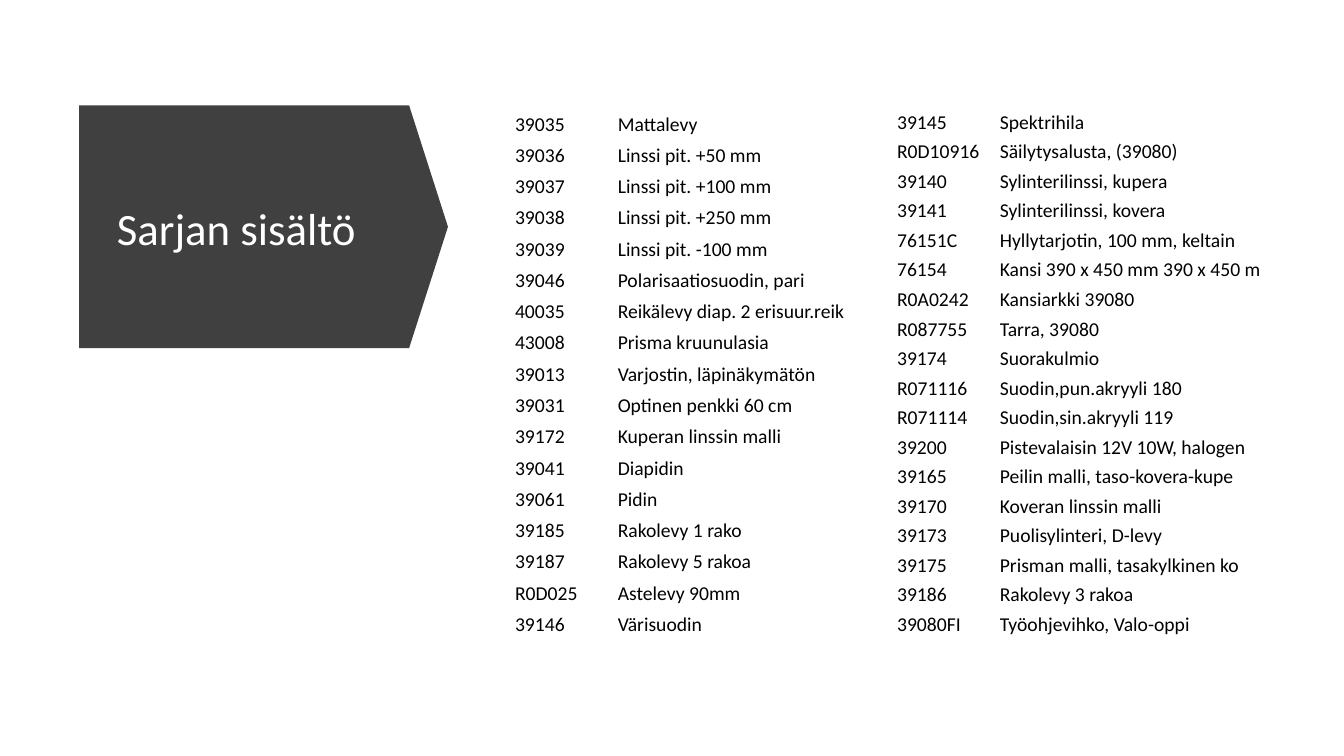
from pptx import Presentation
from pptx.dml.color import RGBColor
from pptx.enum import shapes, text
from pptx.util import Pt

FONT = "Calibri"
COLORS = {"arrow": "404040", "title": "FFFFFF", "text": "000000"}

LEFT = [
    ("39035", "Mattalevy"),
    ("39036", "Linssi pit. +50 mm"),
    ("39037", "Linssi pit. +100 mm"),
    ("39038", "Linssi pit. +250 mm"),
    ("39039", "Linssi pit. -100 mm"),
    ("39046", "Polarisaatiosuodin, pari"),
    ("40035", "Reikälevy diap. 2 erisuur.reik"),
    ("43008", "Prisma kruunulasia"),
    ("39013", "Varjostin, läpinäkymätön"),
    ("39031", "Optinen penkki 60 cm"),
    ("39172", "Kuperan linssin malli"),
    ("39041", "Diapidin"),
    ("39061", "Pidin"),
    ("39185", "Rakolevy 1 rako"),
    ("39187", "Rakolevy 5 rakoa"),
    ("R0D025", "Astelevy 90mm"),
    ("39146", "Värisuodin"),
]
RIGHT = [
    ("39145", "Spektrihila"),
    ("R0D10916", "Säilytysalusta, (39080)"),
    ("39140", "Sylinterilinssi, kupera"),
    ("39141", "Sylinterilinssi, kovera"),
    ("76151C", "Hyllytarjotin, 100 mm, keltain"),
    ("76154", "Kansi 390 x 450 mm 390 x 450 m"),
    ("R0A0242", "Kansiarkki 39080"),
    ("R087755", "Tarra, 39080"),
    ("39174", "Suorakulmio"),
    ("R071116", "Suodin,pun.akryyli 180"),
    ("R071114", "Suodin,sin.akryyli 119"),
    ("39200", "Pistevalaisin 12V 10W, halogen"),
    ("39165", "Peilin malli, taso-kovera-kupe"),
    ("39170", "Koveran linssin malli"),
    ("39173", "Puolisylinteri, D-levy"),
    ("39175", "Prisman malli, tasakylkinen ko"),
    ("39186", "Rakolevy 3 rakoa"),
    ("39080FI", "Työohjevihko, Valo-oppi"),
]


def style(par, size, color, align):
    par.alignment = align
    for run in par.runs:
        run.font.name = FONT
        run.font.size = Pt(size)
        run.font.color.rgb = RGBColor.from_string(COLORS[color])


def add_arrow(slide):
    # Turned a quarter, the block arrow points right
    arrow = slide.shapes.add_shape(
        shapes.MSO_SHAPE.DOWN_ARROW, Pt(101.5), Pt(30.2), Pt(173.5), Pt(263.5))
    arrow.rotation = 270
    arrow.adjustments[0] = 1
    arrow.adjustments[1] = 0.16
    arrow.shadow.inherit = False
    arrow.fill.solid()
    arrow.fill.fore_color.rgb = RGBColor.from_string(COLORS["arrow"])
    arrow.line.fill.background()
    return arrow


def set_title(slide, words):
    title = slide.shapes.title
    title.left, title.top = Pt(76.3), Pt(95)
    title.width, title.height = Pt(210), Pt(140.4)
    frame = title.text_frame
    frame.text = words
    frame.word_wrap = True
    frame.auto_size = text.MSO_AUTO_SIZE.NONE
    frame.vertical_anchor = text.MSO_ANCHOR.MIDDLE
    par = frame.paragraphs[0]
    par.line_spacing = 0.9
    style(par, 32, "title", text.PP_ALIGN.LEFT)
    return title


def fill_cell(cell, words):
    cell.fill.background()
    cell.margin_left = cell.margin_right = cell.margin_top = Pt(0.7)
    cell.margin_bottom = 0
    cell.vertical_anchor = text.MSO_ANCHOR.BOTTOM
    cell.text = words
    style(cell.text_frame.paragraphs[0], 14, "text", text.PP_ALIGN.JUSTIFY)


def add_list(slide, items, left):
    height = 380
    table = slide.shapes.add_table(
        len(items), 2, Pt(left), Pt(75), Pt(269.3), Pt(height)).table
    table.first_row = table.horz_banding = False
    table.columns[0].width = Pt(73.4)
    table.columns[1].width = Pt(195.9)
    for row, item in zip(table.rows, items):
        row.height = Pt(height / len(items))
        for cell, words in zip(row.cells, item):
            fill_cell(cell, words)


def main():
    prs = Presentation()
    prs.slide_width, prs.slide_height = Pt(960), Pt(540)
    slide = prs.slides.add_slide(prs.slide_layouts[5])

    # Title on the arrow
    title = set_title(slide, "Sarjan sisältö")
    arrow = add_arrow(slide)
    title.element.addprevious(arrow.element)

    # Part lists
    add_list(slide, LEFT, 367.2)
    add_list(slide, RIGHT, 640.1)

    prs.save("out.pptx")


if __name__ == "__main__":
    main()
